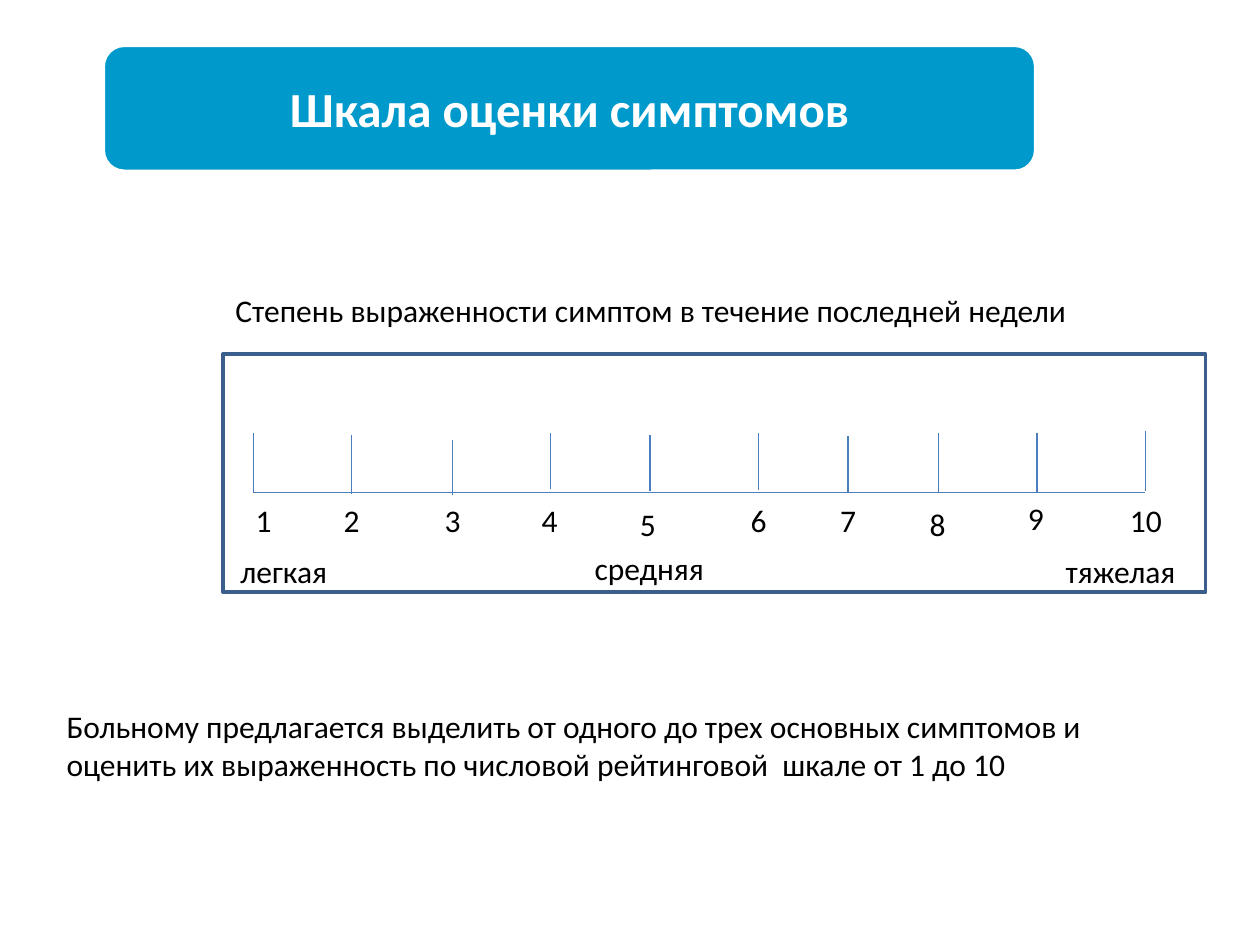
from lxml import etree
from pptx import Presentation
from pptx.dml.color import RGBColor
from pptx.enum.shapes import MSO_CONNECTOR, MSO_SHAPE
from pptx.enum.text import MSO_ANCHOR, MSO_AUTO_SIZE, PP_ALIGN
from pptx.oxml.ns import qn
from pptx.util import Inches, Pt

RECTANGLE = MSO_SHAPE.RECTANGLE
ROUNDED_RECTANGLE = MSO_SHAPE.ROUNDED_RECTANGLE
STRAIGHT = MSO_CONNECTOR.STRAIGHT
MIDDLE = MSO_ANCHOR.MIDDLE
CENTER = PP_ALIGN.CENTER
FIT_SHAPE = MSO_AUTO_SIZE.SHAPE_TO_FIT_TEXT

FONT = "Calibri"
BLACK, WHITE = "000000", "FFFFFF"
BANNER_BLUE, FRAME_BLUE, SCALE_BLUE = "0099CC", "3A5F8C", "4B7EBC"
LINE_HEIGHT = 0.4

# Offsets from the frame: tick x, tick top, tick bottom, label left, label top
TICKS = [
    (0.24, 0.63, 1.10, 0.16, 1.12),
    (1.02, 0.64, 1.11, 0.86, 1.12),
    (1.82, 0.68, 1.12, 1.66, 1.12),
    (2.60, 0.63, 1.07, 2.43, 1.12),
    (3.39, 0.64, 1.09, 3.21, 1.15),
    (4.25, 0.63, 1.08, 4.09, 1.12),
    (4.96, 0.65, 1.10, 4.80, 1.12),
    (5.68, 0.63, 1.10, 5.51, 1.15),
    (6.46, 0.63, 1.10, 6.29, 1.10),
    (7.32, 0.61, 1.09, 7.10, 1.12),
]
SEVERITIES = [
    ("легкая", 0.04, 1.52, 0.90),
    ("средняя", 2.85, 1.50, 1.08),
    ("тяжелая", 6.59, 1.52, 1.08),
]


def color(value):
    """Return the colour for a hex string."""
    return RGBColor.from_string(value)


def style_paragraph(paragraph, size, font_color, bold=False):
    """Set the font of a whole paragraph."""
    paragraph.font.name = FONT
    paragraph.font.size = Pt(size)
    paragraph.font.bold = bold
    paragraph.font.color.rgb = color(font_color)


def add_text(slide, text, left, top, width, height=LINE_HEIGHT, wrap=False):
    """Add a black text box that fits its text."""
    box = slide.shapes.add_textbox(Inches(left), Inches(top), Inches(width), Inches(height))
    frame = box.text_frame
    frame.word_wrap = wrap
    frame.auto_size = FIT_SHAPE
    frame.text = text
    style_paragraph(frame.paragraphs[0], 18, BLACK)


def add_box(slide, kind, left, top, width, height, line_color):
    """Add an outlined shape without a shadow."""
    shape = slide.shapes.add_shape(kind, Inches(left), Inches(top), Inches(width), Inches(height))
    shape.shadow.inherit = False
    shape.line.color.rgb = color(line_color)
    shape.line.width = Pt(2)
    return shape


def add_line(slide, start_x, start_y, end_x, end_y):
    """Add a thin scale line without a shadow."""
    line = slide.shapes.add_connector(
        STRAIGHT, Inches(start_x), Inches(start_y), Inches(end_x), Inches(end_y)
    )
    line.line.color.rgb = color(SCALE_BLUE)
    line.line.width = Pt(0.75)
    etree.SubElement(line._element.spPr, qn("a:effectLst"))


def add_scale(slide, left, top, width, height):
    """Draw the framed ten-point scale with its caption and labels."""
    add_box(slide, RECTANGLE, left, top, width, height, FRAME_BLUE).fill.background()
    caption = "Степень выраженности симптом в течение последней недели"
    add_text(slide, caption, left, top - 0.55, 7.05)
    axis_y = top + 1.1
    add_line(slide, left + TICKS[0][0], axis_y, left + TICKS[-1][0], axis_y)
    for number, (x, tick_top, tick_bottom, label_left, label_top) in enumerate(TICKS, 1):
        add_line(slide, left + x, top + tick_top, left + x, top + tick_bottom)
        label_width = 0.33 if number < 10 else 0.46
        add_text(slide, str(number), left + label_left, top + label_top, label_width)
    for text, label_left, label_top, label_width in SEVERITIES:
        add_text(slide, text, left + label_left, top + label_top, label_width)


def add_banner(slide, left, top, width, height):
    """Draw the title banner."""
    banner = add_box(slide, ROUNDED_RECTANGLE, left, top, width, height, WHITE)
    banner.fill.solid()
    banner.fill.fore_color.rgb = color(BANNER_BLUE)
    frame = banner.text_frame
    frame.text = "Шкала оценки симптомов"
    frame.vertical_anchor = MIDDLE
    paragraph = frame.paragraphs[0]
    paragraph.alignment = CENTER
    style_paragraph(paragraph, 28, WHITE, bold=True)


def add_instruction(slide, left, top, width, height):
    """Write the instruction below the scale."""
    text = (
        "Больному предлагается выделить от одного до трех основных симптомов и "
        "оценить их выраженность по числовой рейтинговой  шкале от 1 до 10"
    )
    add_text(slide, text, left, top, width, height, wrap=True)


def main():
    """Build and save the slide."""
    presentation = Presentation()
    presentation.slide_width = Inches(10)
    presentation.slide_height = Inches(7.5)
    slide = presentation.slides.add_slide(presentation.slide_layouts[6])
    add_scale(slide, 1.77, 2.81, 7.8, 1.89)
    add_instruction(slide, 0.43, 5.56, 9.01, 0.71)
    add_banner(slide, 0.82, 0.36, 7.4, 1)
    presentation.save("out.pptx")


if __name__ == "__main__":
    main()
